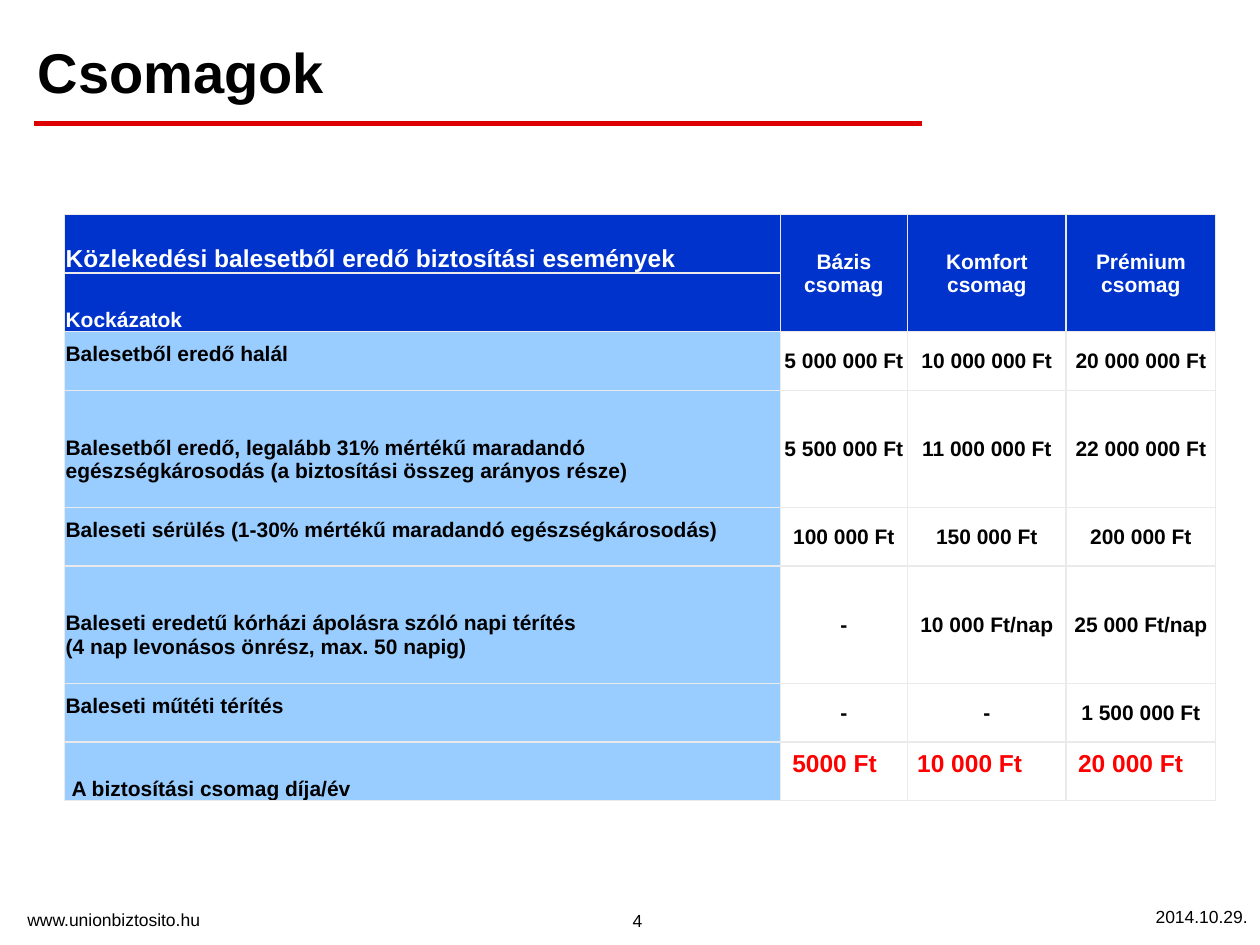
from dataclasses import dataclass
from lxml.etree import SubElement
from pptx import Presentation
from pptx.dml.color import RGBColor
from pptx.enum.shapes import MSO_CONNECTOR as Connector
from pptx.enum.text import MSO_ANCHOR as Anchor, PP_ALIGN as Align
from pptx.oxml.ns import qn
from pptx.util import Pt

COLUMNS = [409, 72.7, 90.7, 85.4]
ROW_UNIT = 33.5
ROW_UNITS = [1, 1, 1, 2, 1, 2, 1, 1]
ROWS = [
    ["Közlekedési balesetből eredő biztosítási események",
     "Bázis csomag", "Komfort csomag", "Prémium csomag"],
    ["Kockázatok", "", "", ""],
    ["Balesetből eredő halál", "5 000 000 Ft", "10 000 000 Ft", "20 000 000 Ft"],
    ["Balesetből eredő, legalább 31% mértékű maradandó egészségkárosodás "
     "(a biztosítási összeg arányos része)",
     "5 500 000 Ft", "11 000 000 Ft", "22 000 000 Ft"],
    ["Baleseti sérülés (1-30% mértékű maradandó egészségkárosodás)",
     "100 000 Ft", "150 000 Ft", "200 000 Ft"],
    ["Baleseti eredetű kórházi ápolásra szóló napi térítés\n"
     "(4 nap levonásos önrész, max. 50 napig)",
     "-", "10 000 Ft/nap", "25 000 Ft/nap"],
    ["Baleseti műtéti térítés", "-", "-", "1 500 000 Ft"],
    ["A biztosítási csomag díja/év", "", "", ""],
]
HEADER_ROWS = 2
FEE_ROW = len(ROWS) - 1
FEES = [("5000 Ft", 445.7, 67.7), ("10 000 Ft", 517, 101.5), ("20 000 Ft", 609, 81.4)]


def color(value):
    return RGBColor.from_string(value)


@dataclass
class SlideBuilder:
    page: object
    font: str = "Arial"
    ink: str = "000000"
    paper: str = "FFFFFF"
    header: str = "0033CC"
    label: str = "99CCFF"
    rule_color: str = "DD0000"
    fee_color: str = "FF0000"
    border: str = "EAEAEA"

    def style(self, para, size, ink, bold, align):
        para.alignment = align
        font = para.font
        font.name, font.size, font.bold = self.font, Pt(size), bold
        font.color.rgb = color(ink)

    def text(self, words, left, top, width, height, size=10, ink=None,
             bold=False, align=Align.LEFT, anchor=Anchor.TOP, spacing=None):
        box = self.page.shapes.add_textbox(Pt(left), Pt(top), Pt(width), Pt(height))
        frame = box.text_frame
        frame.word_wrap = True
        frame.vertical_anchor = anchor
        frame.text = words
        para = frame.paragraphs[0]
        self.style(para, size, ink or self.ink, bold, align)
        if spacing:
            para.line_spacing = spacing

    def rule(self, left, right, top, width):
        line = self.page.shapes.add_connector(
            Connector.STRAIGHT, Pt(left), Pt(top), Pt(right), Pt(top))
        line.line.color.rgb = color(self.rule_color)
        line.line.width = Pt(width)
        SubElement(line._element.spPr, qn("a:effectLst"))

    def borders(self, cell):
        properties = cell._tc.get_or_add_tcPr()
        for side in ("a:lnL", "a:lnR", "a:lnT", "a:lnB"):
            line = SubElement(properties, qn(side), w=str(Pt(1)))
            fill = SubElement(line, qn("a:solidFill"))
            SubElement(fill, qn("a:srgbClr"), val=self.border)

    def cell(self, cell, words, row, column):
        is_header, is_label = row < HEADER_ROWS, column == 0
        self.borders(cell)
        cell.fill.solid()
        cell.fill.fore_color.rgb = color(
            self.header if is_header else self.label if is_label else self.paper)
        cell.margin_left = cell.margin_right = cell.margin_top = Pt(0.6)
        cell.margin_bottom = Pt(0)
        cell.vertical_anchor = Anchor.BOTTOM if is_label else Anchor.MIDDLE
        if is_label and HEADER_ROWS <= row < FEE_ROW:
            cell.margin_bottom = Pt(14)
        if is_label and row == FEE_ROW:
            cell.margin_left = Pt(4)
        cell.text_frame.text = words
        for para in cell.text_frame.paragraphs:
            self.style(para, 14 if row == column == 0 else 12,
                       self.paper if is_header else self.ink, True,
                       Align.LEFT if is_label else Align.CENTER)

    def table(self, left, top):
        frame = self.page.shapes.add_table(
            len(ROWS), len(COLUMNS), Pt(left), Pt(top),
            Pt(sum(COLUMNS)), Pt(sum(ROW_UNITS) * ROW_UNIT))
        table = frame.table
        table.horz_banding = False
        for column, width in zip(table.columns, COLUMNS):
            column.width = Pt(width)
        for row, units in zip(table.rows, ROW_UNITS):
            row.height = Pt(units * ROW_UNIT)
        for row, entries in enumerate(ROWS):
            for column, words in enumerate(entries):
                self.cell(table.cell(row, column), words, row, column)
        for column in range(1, len(COLUMNS)):
            table.cell(0, column).merge(table.cell(HEADER_ROWS - 1, column))


def main():
    deck = Presentation()
    deck.slide_width, deck.slide_height = Pt(720), Pt(540)
    slide = SlideBuilder(deck.slides.add_slide(deck.slide_layouts[6]))
    slide.text("4", 248.4, 496.8, 231.8, 38.9, align=Align.CENTER, anchor=Anchor.BOTTOM)
    slide.text("www.unionbiztosito.hu", 8.6, 516.2, 187.2, 19.4)
    slide.text("2014.10.29.", 586.8, 514, 133.2, 19.4, align=Align.RIGHT)
    slide.rule(19.5, 527, 70.6, 2.5)
    slide.text("Csomagok", 14.4, 20.2, 512.6, 48.2, size=32, bold=True,
               anchor=Anchor.MIDDLE, spacing=0.8)
    slide.table(36.9, 122.6)
    for amount, left, width in FEES:
        slide.text(amount, left, 424.1, width, 24.5, size=14,
                   ink=slide.fee_color, bold=True)
    deck.save("out.pptx")


if __name__ == "__main__":
    main()
